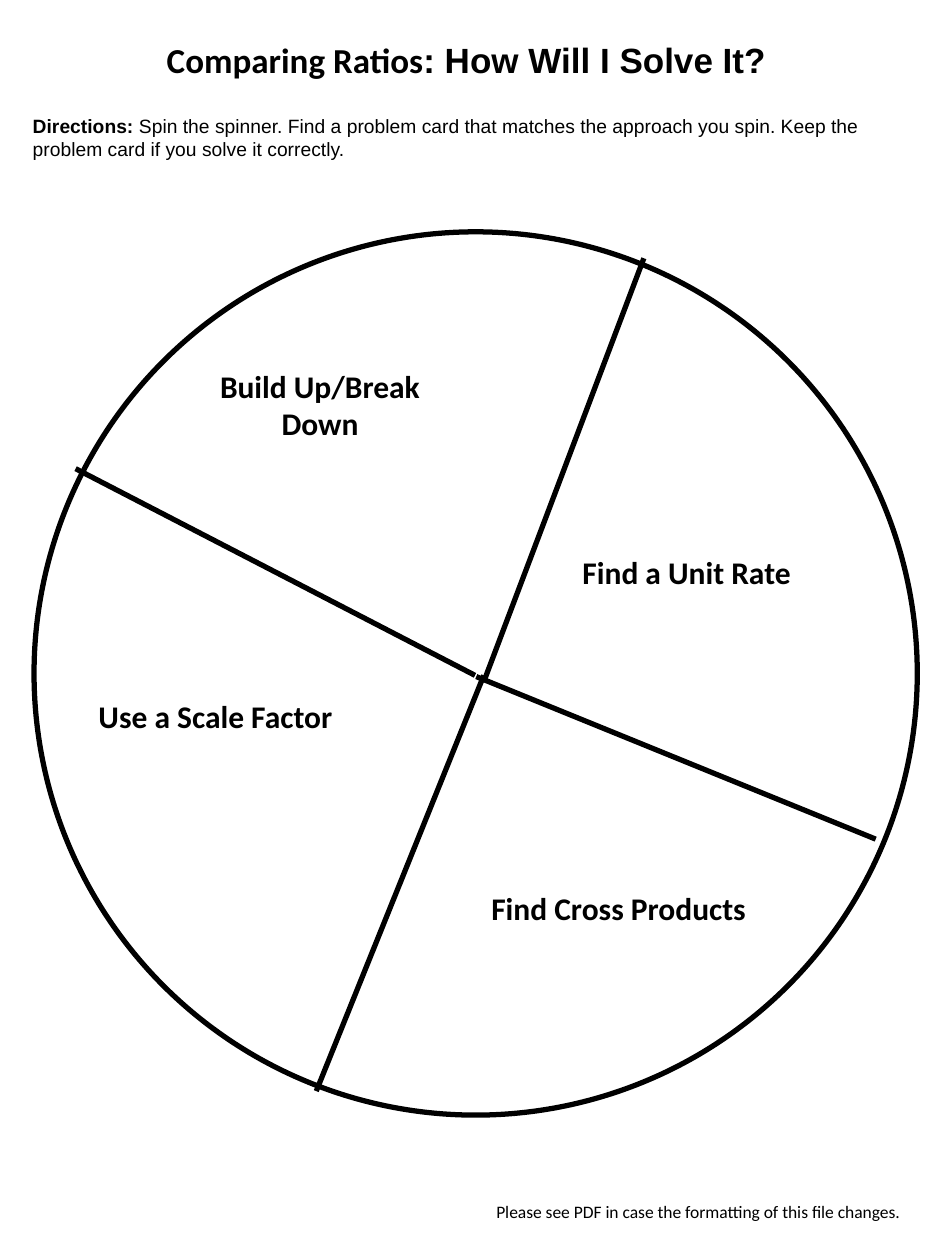
from lxml import etree
from pptx import Presentation
from pptx.dml.color import RGBColor
from pptx.enum.shapes import MSO_CONNECTOR, MSO_SHAPE
from pptx.enum.text import MSO_ANCHOR, MSO_AUTO_SIZE, PP_ALIGN
from pptx.oxml.ns import qn
from pptx.util import Inches, Pt

BLACK = RGBColor(0x00, 0x00, 0x00)
WHITE = RGBColor(0xFF, 0xFF, 0xFF)
STRAIGHT = MSO_CONNECTOR.STRAIGHT
OVAL = MSO_SHAPE.OVAL
TOP, MIDDLE = MSO_ANCHOR.TOP, MSO_ANCHOR.MIDDLE
LEFT, CENTER = PP_ALIGN.LEFT, PP_ALIGN.CENTER
NO_FIT = MSO_AUTO_SIZE.NONE

LABEL_SIZE = (2.28, 1.3)
LABELS = [
    ("Build Up/Break Down", 1.4, 2.56),
    ("Find a Unit Rate", 4.31, 3.89),
    ("Use a Scale Factor", 0.57, 5.03),
    ("Find Cross Products", 3.77, 6.56),
]
SPOKES = [
    (5.11, 2.05, 3.84, 5.41),
    (3.77, 5.36, 0.6, 3.72),
    (3.78, 5.37, 6.95, 6.66),
    (3.84, 5.36, 2.51, 8.66),
]


def write(sp, runs, size, align=LEFT, anchor=MIDDLE):
    """Fill a shape with one paragraph of (text, font, bold) runs."""
    tf = sp.text_frame
    tf.word_wrap = True
    tf.auto_size = NO_FIT
    tf.vertical_anchor = anchor
    p = tf.paragraphs[0]
    p.alignment = align
    p.space_before = Pt(0)
    for text, font, bold in runs:
        r = p.add_run()
        r.text = text
        r.font.name = font
        r.font.size = Pt(size)
        r.font.bold = bold
        r.font.color.rgb = BLACK
    return p


class Spinner:
    """Draws the parts of a spinner page in one style."""

    def __init__(self, slide, line_width=3):
        self.s = slide
        self.line_width = Pt(line_width)

    def banner(self, sp, top, runs, size, align):
        """Place a placeholder as a full-width white band."""
        sp.left, sp.top = Inches(0.16), Inches(top)
        sp.width, sp.height = Inches(7.16), Inches(0.62)
        sp.fill.solid()
        sp.fill.fore_color.rgb = WHITE
        sp.line.color.rgb = WHITE
        sp.line.width = Pt(1)
        return write(sp, runs, size, align)

    def wheel(self, left, top, size):
        """Draw the outline of the spinner."""
        sp = self.s.shapes.add_shape(OVAL, Inches(left), Inches(top), Inches(size), Inches(size))
        sp.shadow.inherit = False
        sp.fill.solid()
        sp.fill.fore_color.rgb = WHITE
        sp.line.color.rgb = BLACK
        sp.line.width = self.line_width

    def spoke(self, *ends):
        """Draw a dividing line between two points."""
        c = self.s.shapes.add_connector(STRAIGHT, *map(Inches, ends))
        c.line.color.rgb = BLACK
        c.line.width = self.line_width
        etree.SubElement(c.line._get_or_add_ln().getparent(), qn("a:effectLst"))

    def text(self, box, text, size, **style):
        """Add a text box with a single Calibri run."""
        bold = style.pop("bold", False)
        sp = self.s.shapes.add_textbox(*map(Inches, box))
        write(sp, [(text, "Calibri", bold)], size, **style)


def main():
    """Build the spinner page."""
    prs = Presentation()
    prs.slide_width, prs.slide_height = Inches(7.5), Inches(10)
    s = prs.slides.add_slide(prs.slide_layouts[1])
    page = Spinner(s)

    title = [("Comparing Ratios", "Calibri", True), (": How Will I Solve It? ", "Arial", True)]
    page.banner(s.shapes.title, 0.16, title, 20, CENTER)
    directions = [
        ("Directions:", "Arial", True),
        (" Spin the spinner. Find a problem card that matches the approach you spin. "
         "Keep the problem card if you solve it correctly.", "Arial", False),
    ]
    p = page.banner(s.placeholders[1], 0.78, directions, 11, LEFT)
    pPr = p._p.get_or_add_pPr()
    pPr.set("marL", "0")
    pPr.set("indent", "0")
    etree.SubElement(pPr, qn("a:buNone"))

    page.wheel(0.27, 1.84, 7.01)
    for ends in SPOKES:
        page.spoke(*ends)
    for text, left, top in LABELS:
        page.text((left, top, *LABEL_SIZE), text, 18, bold=True, align=CENTER)
    page.text((3.84, 9.48, 4.51, 0.27),
              "Please see PDF in case the formatting of this file changes.", 10, anchor=TOP)
    prs.save("out.pptx")


if __name__ == "__main__":
    main()
